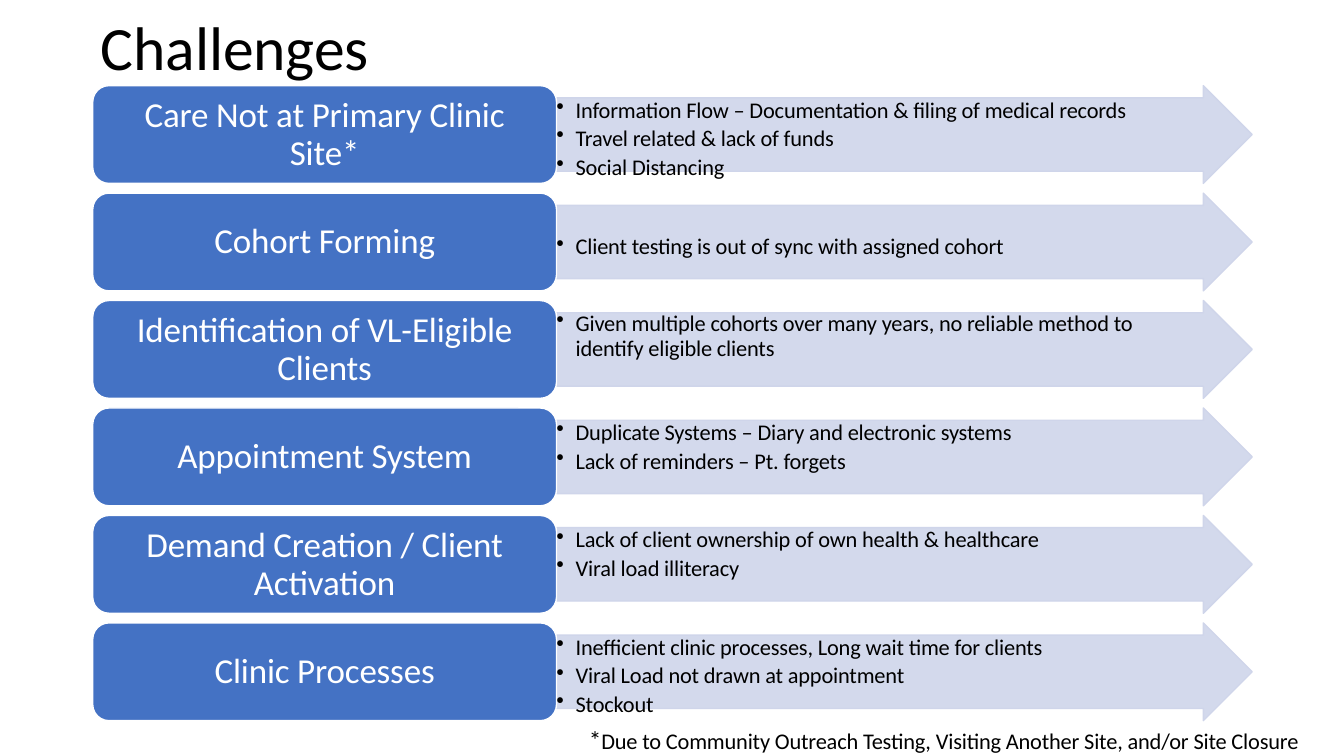
"""Builds the Challenges slide: six labelled arrows with bullet points."""
import pptx
import pptx.dml.color
import pptx.enum.shapes
import pptx.enum.text
import pptx.oxml
import pptx.oxml.ns
import pptx.util

Inches, Pt, qn = pptx.util.Inches, pptx.util.Pt, pptx.oxml.ns.qn
MSO_SHAPE = pptx.enum.shapes.MSO_SHAPE
ANCHOR = pptx.enum.text.MSO_ANCHOR
ALIGN = pptx.enum.text.PP_ALIGN

TITLE = "Challenges"
CHALLENGES = [
    ("Care Not at Primary Clinic\vSite*",
     ["Information Flow – Documentation & filing of medical records",
      "Travel related & lack of funds",
      "Social Distancing"]),
    ("Cohort Forming",
     ["Client testing is out of sync with assigned cohort"]),
    ("Identification of VL-Eligible\vClients",
     ["Given multiple cohorts over many years, no reliable method to\videntify eligible clients"]),
    ("Appointment System",
     ["Duplicate Systems – Diary and electronic systems",
      "Lack of reminders – Pt. forgets"]),
    ("Demand Creation / Client\vActivation",
     ["Lack of client ownership of own health & healthcare",
      "Viral load illiteracy"]),
    ("Clinic Processes",
     ["Inefficient clinic processes, Long wait time for clients",
      "Viral Load not drawn at appointment",
      "Stockout"]),
]
FOOTNOTE = [("*", 18),
            ("Due to Community Outreach Testing, Visiting Another Site, and/or Site Closure", 16)]

FONT = "Calibri"
BLACK, WHITE, BLUE, PALE = "000000", "FFFFFF", "4472C4", "CFD5EA"
FIRST_TOP, LAST_TOP, ROW_H = 0.85, 6.18, 0.97
PITCH = (LAST_TOP - FIRST_TOP) / (len(CHALLENGES) - 1)
LABEL_X, LABEL_W, ARROW_W = 0.92, 4.6, 6.9
ARROW_X = LABEL_X + LABEL_W


def rgb(color):
    return pptx.dml.color.RGBColor.from_string(color)


def style(p, size, color, tracking=-0.1):
    p.font.name, p.font.size = FONT, Pt(size)
    p.font.color.rgb = rgb(color)
    p._p.pPr.find(qn("a:defRPr")).set("spc", str(round(tracking * 100)))


def clear_margins(tf):
    tf.margin_left = tf.margin_right = tf.margin_top = tf.margin_bottom = 0
    tf.word_wrap = True


def add_text(slide, x, y, w, h):
    tf = slide.shapes.add_textbox(Inches(x), Inches(y), Inches(w), Inches(h)).text_frame
    clear_margins(tf)
    return tf


def add_block(slide, kind, x, y, w, fill, line):
    sp = slide.shapes.add_shape(kind, Inches(x), Inches(y), Inches(w), Inches(ROW_H))
    sp.shadow.inherit = False
    sp.fill.solid()
    sp.fill.fore_color.rgb = rgb(fill)
    sp.line.color.rgb = rgb(line)
    sp.line.width = Pt(1)
    return sp


def add_arrow(slide, top):
    sp = add_block(slide, MSO_SHAPE.RIGHT_ARROW, ARROW_X, top, ARROW_W, PALE, PALE)
    sp.adjustments[0], sp.adjustments[1] = 0.75, 0.5
    color = sp._element.spPr.find(qn("a:solidFill"))[0]
    color.append(pptx.oxml.parse_xml(
        '<a:alpha xmlns:a="http://schemas.openxmlformats.org/drawingml/2006/main" val="90000"/>'))


def add_bullets(slide, top, points):
    lines = len(points) + sum(point.count("\v") for point in points)
    offset = 0.39 if lines == 1 else 0.1
    tf = add_text(slide, ARROW_X - 0.01, top + offset, 6.2, 0.29 * lines)
    for i, point in enumerate(points):
        p = tf.add_paragraph() if i else tf.paragraphs[0]
        p.text = point
        style(p, 16, BLACK)
        if i:
            p.space_before = Pt(1.2)
        if "\v" in point:
            p.line_spacing = Pt(18)
        pPr = p._p.pPr
        pPr.set("marL", str(Inches(0.2)))
        pPr.set("indent", str(-Inches(0.19)))
        bullet = pptx.oxml.parse_xml(
            '<a:buChar xmlns:a="http://schemas.openxmlformats.org/drawingml/2006/main" char="•"/>')
        pPr.find(qn("a:defRPr")).addprevious(bullet)


def add_label(slide, top, label):
    sp = add_block(slide, MSO_SHAPE.ROUNDED_RECTANGLE, LABEL_X, top, LABEL_W, BLUE, WHITE)
    tf = sp.text_frame
    clear_margins(tf)
    tf.vertical_anchor = ANCHOR.MIDDLE
    p = tf.paragraphs[0]
    p.text = label
    p.alignment = ALIGN.CENTER
    p.line_spacing = Pt(27)
    style(p, 25, WHITE)


def main():
    prs = pptx.Presentation()
    prs.slide_width, prs.slide_height = Inches(13.33), Inches(7.5)
    slide = prs.slides.add_slide(prs.slide_layouts[6])

    p = add_text(slide, 1, 0.09, 4.04, 0.75).paragraphs[0]
    p.text = TITLE
    style(p, 44, BLACK)

    for row, (label, points) in enumerate(CHALLENGES):
        top = FIRST_TOP + row * PITCH
        add_arrow(slide, top)
        add_bullets(slide, top, points)
        add_label(slide, top, label)

    p = add_text(slide, 5.84, 7.19, 7.4, 0.31).paragraphs[0]
    style(p, 16, BLACK)
    for text, size in FOOTNOTE:
        r = p.add_run()
        r.text = text
        r.font.size = Pt(size)

    prs.save("out.pptx")


if __name__ == "__main__":
    main()
